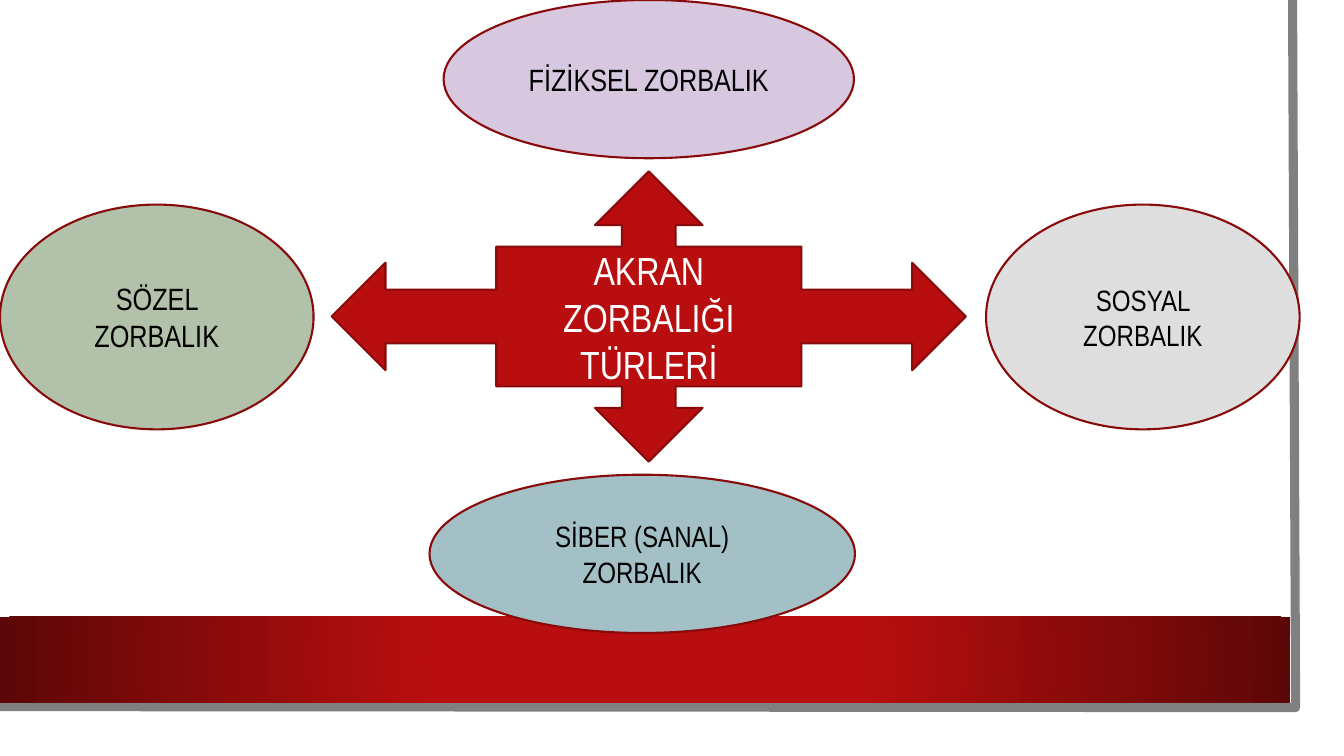
from lxml import etree
from pptx import Presentation
from pptx.dml.color import RGBColor
from pptx.enum import shapes, text
from pptx.oxml import ns
from pptx.util import Inches, Pt

THEME = {
    "font": "Arial Narrow", "white": "FFFFFF", "black": "000000",
    "red": "B80E0F", "dark": "5C0707", "edge": "880A0B", "gray": "808080",
    "sage": "B2C2AA", "teal": "A2C0C5", "pale": "DEDEDE", "lilac": "D7C8E0",
    "title": 28, "large": 22, "small": 21, "rim": 1.5, "frame": 6.5,
}
PAGE = (0, 0, 13.1, 7.27)
BAND = (0, 6.12, 12.8, 0.85)
FRAME = [(12.82, 0), (12.85, 7.02), (-0.03, 7.01)]
HUB = ("AKRAN ZORBALIĞI TÜRLERİ", (3.29, 1.7, 6.29, 2.88))
KINDS = [
    ("SİBER (SANAL) ZORBALIK", (4.26, 4.71, 4.22, 1.57), "teal", "small"),
    ("SÖZEL ZORBALIK", (0, 2.03, 3.11, 2.23), "sage", "large"),
    ("SOSYAL ZORBALIK", (9.78, 2.03, 3.11, 2.23), "pale", "small"),
    ("FİZİKSEL ZORBALIK", (4.4, 0, 4.07, 1.57), "lilac", "large"),
]
SHAPE = shapes.MSO_SHAPE


def color(name):
    return RGBColor.from_string(THEME[name])


def add_box(slide, kind, box, fill, rim=None):
    shape = slide.shapes.add_shape(kind, *map(Inches, box))
    shape.shadow.inherit = False
    shape.fill.solid()
    shape.fill.fore_color.rgb = color(fill)
    if rim:
        shape.line.color.rgb = color(rim)
        shape.line.width = Pt(THEME["rim"])
    else:
        shape.line.fill.background()
    return shape


def put_text(shape, words, size="large", ink="black"):
    frame = shape.text_frame
    frame.word_wrap = True
    frame.vertical_anchor = text.MSO_ANCHOR.MIDDLE
    para = frame.paragraphs[0]
    para.alignment = text.PP_ALIGN.CENTER
    run = para.add_run()
    run.text = words
    run.font.name = THEME["font"]
    run.font.size = Pt(THEME[size])
    run.font.color.rgb = color(ink)


def add_glow(shape, stops):
    props = shape.fill._xPr
    old = props.find(ns.qn("a:solidFill"))
    grad = etree.Element(ns.qn("a:gradFill"), rotWithShape="1")
    steps = etree.SubElement(grad, ns.qn("a:gsLst"))
    for place, name in stops:
        stop = etree.SubElement(steps, ns.qn("a:gs"), pos=str(place * 1000))
        etree.SubElement(stop, ns.qn("a:srgbClr"), val=THEME[name])
    way = etree.SubElement(grad, ns.qn("a:path"), {"path": "circle"})
    etree.SubElement(way, ns.qn("a:fillToRect"),
                     {side: "50000" for side in "ltrb"})
    props.replace(old, grad)


def add_frame(slide, points):
    start, *rest = [tuple(map(Inches, point)) for point in points]
    pen = slide.shapes.build_freeform(*start)
    pen.add_line_segments(rest, close=False)
    edge = pen.convert_to_shape()
    edge.shadow.inherit = False
    edge.fill.background()
    edge.line.color.rgb = color("gray")
    edge.line.width = Pt(THEME["frame"])


def main():
    deck = Presentation()
    deck.slide_width, deck.slide_height = Inches(13.33), Inches(7.5)
    slide = deck.slides.add_slide(deck.slide_layouts[6])
    add_box(slide, SHAPE.RECTANGLE, PAGE, "white")
    add_frame(slide, FRAME)
    band = add_box(slide, SHAPE.RECTANGLE, BAND, "red")
    add_glow(band, [(34, "red"), (100, "dark")])
    words, box = HUB
    hub = add_box(slide, SHAPE.QUAD_ARROW_CALLOUT, box, "red", "edge")
    put_text(hub, words, size="title", ink="white")
    for words, box, fill, size in KINDS:
        oval = add_box(slide, SHAPE.OVAL, box, fill, "edge")
        put_text(oval, words, size=size)
    deck.save("out.pptx")


if __name__ == "__main__":
    main()
